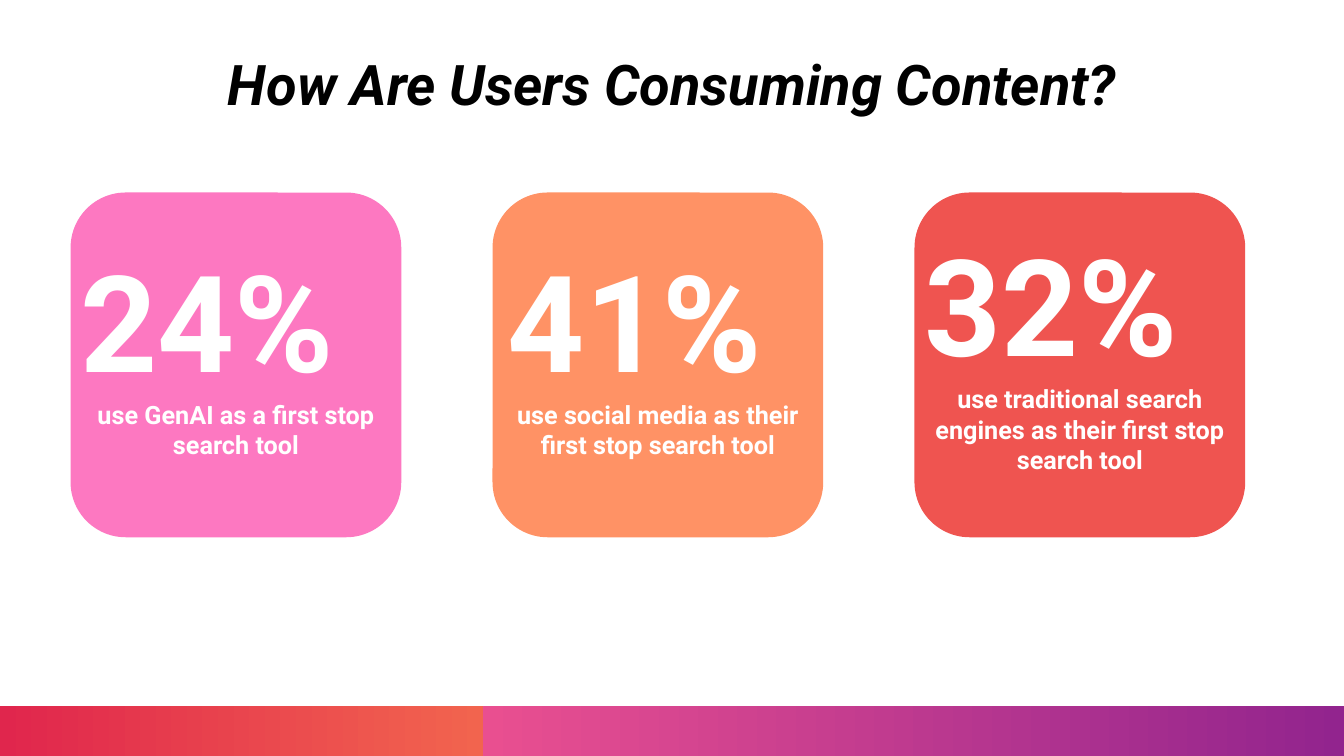
import pptx
import pptx.util
import pptx.dml.color
import pptx.enum.shapes
import pptx.enum.text

Inches, Pt = pptx.util.Inches, pptx.util.Pt
ALIGN = pptx.enum.text.PP_ALIGN
SHAPES = pptx.enum.shapes.MSO_SHAPE

COLORS = {
    "white": "FFFFFF", "black": "000000",
    "pink": "FD78C1", "orange": "FF9265", "red": "EF5450",
    "band_red": "E0264D", "band_orange": "F2644E",
    "band_pink": "E94F90", "band_purple": "92248E",
}


def rgb(name):
    return pptx.dml.color.RGBColor.from_string(COLORS[name])


def write(paragraph, text, color, align, **font_values):
    paragraph.text = text
    paragraph.alignment = align
    font = paragraph.font
    font.color.rgb = rgb(color)
    for key, value in {"name": "Roboto", "bold": True, **font_values}.items():
        setattr(font, key, value)


# Slide and grid
WIDTH, HEIGHT = 13.33, 7.5
CARD_LEFT, CARD_TOP, CARD_WIDTH, CARD_HEIGHT = 0.7, 1.91, 3.28, 3.42
COLUMN_STEP = 4.185
TEXT_MIDDLE = 3.47
BAND_HEIGHT = HEIGHT / 15
PURPLE_START = 4.79

deck = pptx.Presentation()
deck.slide_width, deck.slide_height = Inches(WIDTH), Inches(HEIGHT)
slide = deck.slides.add_slide(deck.slide_layouts[5])
slide.background.fill.solid()
slide.background.fill.fore_color.rgb = rgb("white")

# Gradient bands along the bottom edge
bands = [
    (0, "band_red", "band_orange", PURPLE_START / WIDTH),
    (PURPLE_START, "band_pink", "band_purple", 1),
]
for left, start, end, end_position in bands:
    band = slide.shapes.add_shape(
        SHAPES.RECTANGLE, Inches(left), Inches(HEIGHT - BAND_HEIGHT),
        Inches(WIDTH - left), Inches(BAND_HEIGHT))
    band.shadow.inherit = False
    band.line.fill.background()
    band.fill.gradient()
    band.fill.gradient_angle = 0
    stops = band.fill.gradient_stops
    for stop, color, position in zip(stops, (start, end), (0, end_position)):
        stop.color.rgb = rgb(color)
        stop.position = position

# Title
title = slide.shapes.title
title.left, title.top = Inches(0.65), Inches(0.44)
title.width, title.height = Inches(WIDTH - 2 * 0.65), Inches(1.73)
title.text_frame.auto_size = pptx.enum.text.MSO_AUTO_SIZE.NONE
title.text_frame.vertical_anchor = pptx.enum.text.MSO_ANCHOR.TOP
write(title.text_frame.paragraphs[0], "How Are Users Consuming Content?",
      "black", ALIGN.CENTER, size=Pt(40), italic=True)

# Cards: share, finding, colour, lines of the finding, text width
cards = [
    ("24%", "use GenAI as a first stop search tool", "pink", 2, CARD_WIDTH),
    ("41%", "use social media as their first stop search tool", "orange", 2, 3.17),
    ("32%", "use traditional search engines as their first stop search tool",
     "red", 3, CARD_WIDTH),
]
for column, (share, finding, color, lines, text_width) in enumerate(cards):
    left = CARD_LEFT + column * COLUMN_STEP
    card = slide.shapes.add_shape(
        SHAPES.ROUNDED_RECTANGLE, Inches(left), Inches(CARD_TOP),
        Inches(CARD_WIDTH), Inches(CARD_HEIGHT))
    card.shadow.inherit = False
    card.line.fill.background()
    card.fill.solid()
    card.fill.fore_color.rgb = rgb(color)

    text_height = 1.71 + 0.305 * lines
    statistic = slide.shapes.add_textbox(
        Inches(left + (CARD_WIDTH - text_width) / 2),
        Inches(TEXT_MIDDLE - text_height / 2),
        Inches(text_width), Inches(text_height)).text_frame
    statistic.word_wrap = True
    write(statistic.paragraphs[0], share, "white", ALIGN.LEFT, size=Pt(96))
    write(statistic.add_paragraph(), finding, "white", ALIGN.CENTER, size=Pt(18))

deck.save("out.pptx")
